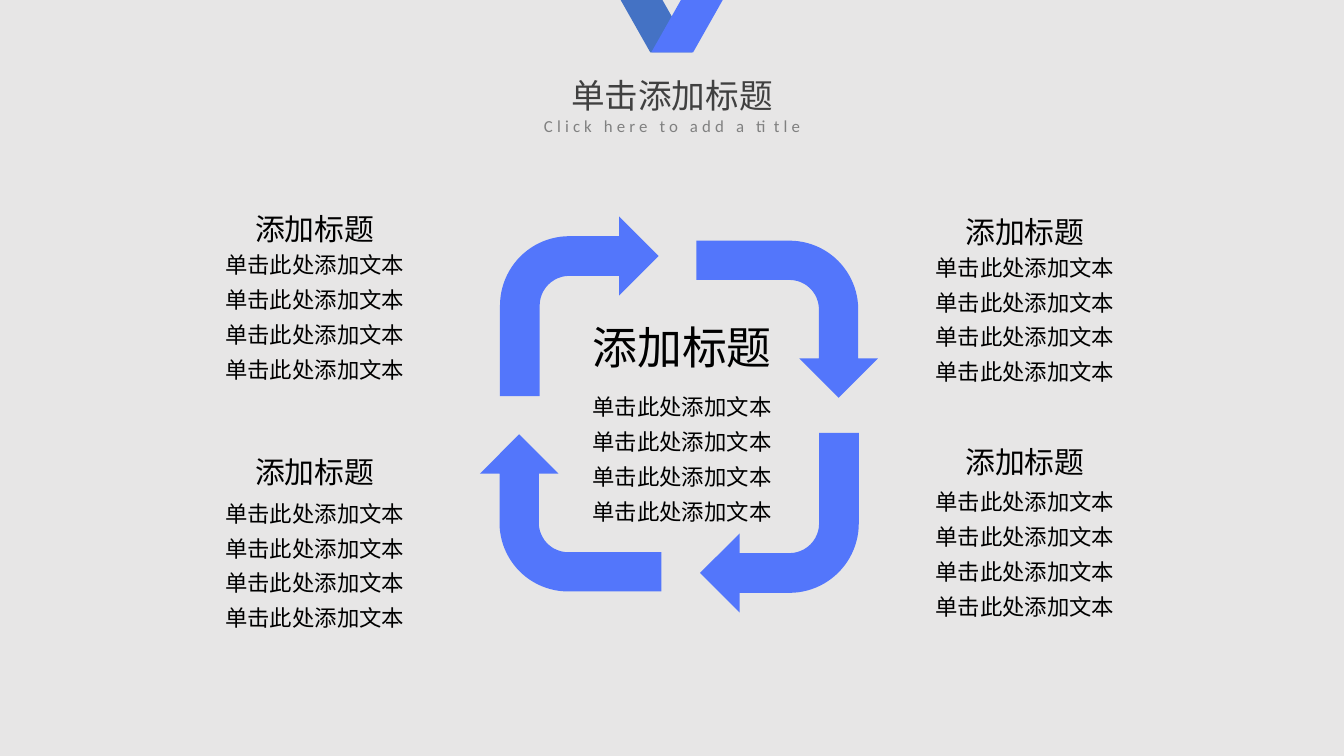
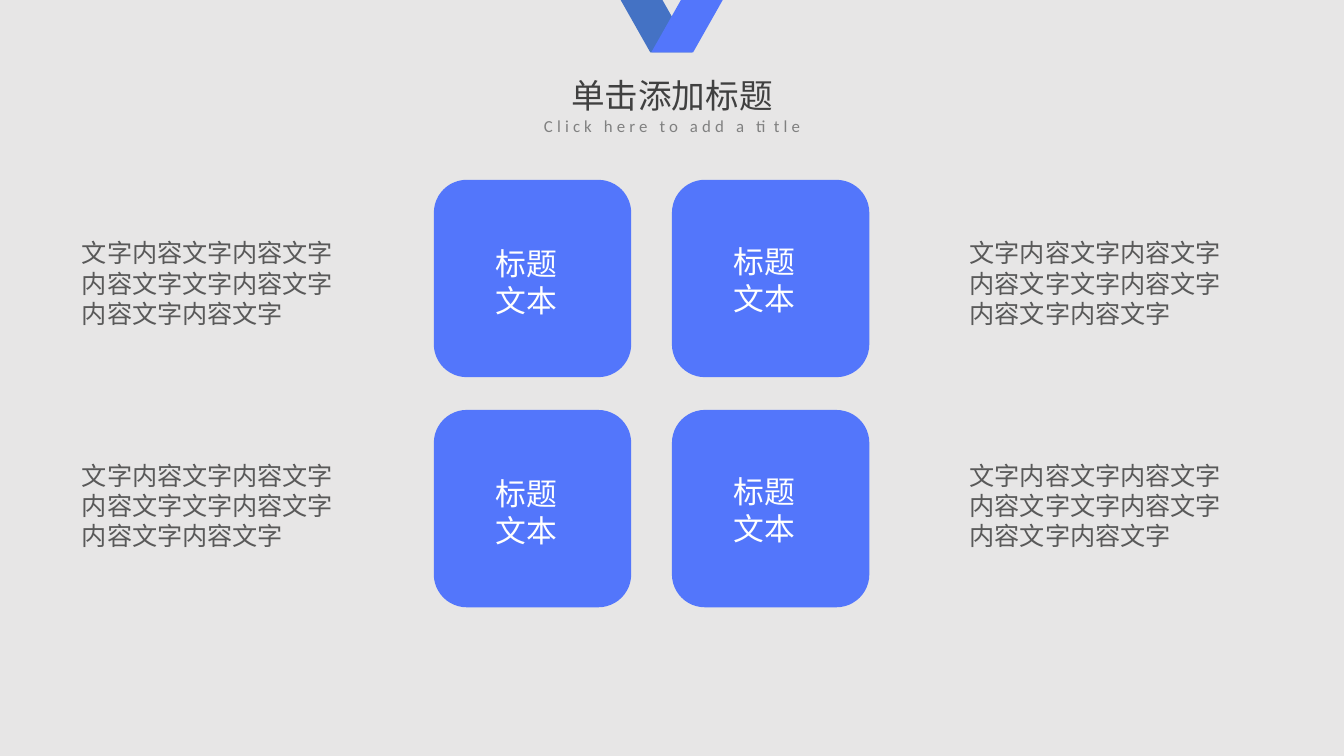
from pptx import Presentation
from pptx.dml.color import RGBColor as Rgb
from pptx.enum.shapes import MSO_SHAPE as Kind
from pptx.enum.text import MSO_AUTO_SIZE as Fit, PP_ALIGN as Align
from pptx.oxml.ns import qn
from pptx.util import Cm, Pt
from lxml.etree import SubElement as Sub

INK = {
    "back": "E7E6E6", "blue": "5376FB", "deep": "4472C4", "title": "404040",
    "sub": "808080", "black": "000000", "white": "FFFFFF", "note": "595959",
}
HAN, LATIN = "Noto Sans CJK SC", "Calibri"
HEAD, LINE = "添加标题", "单击此处添加文本"
NOTE = "文字内容文字内容文字内容文字文字内容文字内容文字内容文字"


def paint(shape, tone):
    shape.shadow.inherit = False
    shape.fill.solid()
    shape.fill.fore_color.rgb = Rgb.from_string(INK[tone])
    shape.line.fill.background()


def write(slide, box, lines, align=Align.CENTER, space=None):
    """Add a text box; each line is (text, size, tone, font, tracking)."""
    frame = slide.shapes.add_textbox(*map(Cm, box)).text_frame
    frame.word_wrap = True
    frame.auto_size = Fit.SHAPE_TO_FIT_TEXT
    for i, (text, size, tone, face, track) in enumerate(lines):
        para = frame.add_paragraph() if i else frame.paragraphs[0]
        para.alignment = align
        if space:
            para.line_spacing = space
        run = para.add_run()
        run.text = text
        font = run.font
        font.size, font.name = Pt(size), face
        font.color.rgb = Rgb.from_string(INK[tone])
        props = run._r.get_or_add_rPr()
        Sub(props, qn("a:ea")).set("typeface", face)
        if track:
            props.set("spc", str(round(track * 100)))


def han(text, size, tone):
    return text, size, tone, HAN, 0


def ribbon(slide, x, y, wide, high):
    """Draw two slanted bands that mirror each other and meet in a V."""
    band, foot = 0.79, 0.56
    left = [(0, 0), (band, 0), (foot + band, high), (foot, high)]
    right = [(wide - dx, dy) for dx, dy in left]
    for tone, dots in (("deep", left), ("blue", right)):
        dots = [(Cm(x + dx), Cm(y + dy)) for dx, dy in dots]
        form = slide.shapes.build_freeform(*dots[0])
        form.add_line_segments(dots[1:], close=True)
        paint(form.convert_to_shape(), tone)


def base(deck):
    """Add a slide with the shared background, title and ribbon."""
    slide = deck.slides.add_slide(deck.slide_layouts[6])
    fill = slide.background.fill
    fill.solid()
    fill.fore_color.rgb = Rgb.from_string(INK["back"])
    write(slide, (7.94, 1.3, 9.52, 1.42), [
        han("单击添加标题", 18, "title"),
        ("Click here to add a title", 9, "sub", LATIN, 2.2),
    ])
    ribbon(slide, 11.73, 0, 1.93, 0.99)
    return slide


def block(slide, x, y, gap, size=16, inset=0.6):
    """Place a heading with four lines that start gap below its top."""
    wide = 5
    write(slide, (x + inset, y, wide - 2 * inset, 0.94), [han(HEAD, size, "black")])
    write(slide, (x, y + gap, wide, 2.92), [han(LINE, 12, "black")] * 4, space=1.3)


def loop(slide, x, y):
    """Draw four bent arrows that turn clockwise."""
    for dx, dy, wide, high, turn in (
        (0.15, 0, 3, 3.4, 0),
        (4.09, 0.23, 2.97, 3.43, 90),
        (0, 3.89, 2.97, 3.43, 270),
        (3.93, 4.09, 3, 3.4, 180),
    ):
        place = map(Cm, (x + dx, y + dy, wide, high))
        arrow = slide.shapes.add_shape(Kind.BENT_ARROW, *place)
        arrow.rotation = turn
        paint(arrow, "blue")


def cycle(deck):
    slide = base(deck)
    loop(slide, 9.3, 4.09)
    block(slide, 10.39, 5.92, 1.24, size=24, inset=0.23)
    for x, y, gap in (
        (16.87, 3.91, 0.61), (16.87, 8.26, 0.69),
        (3.45, 3.86, 0.61), (3.45, 8.46, 0.71),
    ):
        block(slide, x, y, gap)


def card(slide, x, y, side, drop):
    """Draw a rounded tile with its label drop below the top edge."""
    tile = slide.shapes.add_shape(Kind.ROUNDED_RECTANGLE, *map(Cm, (x, y, side, side)))
    tile.adjustments[0] = 0.167
    paint(tile, "blue")
    write(slide, (x + 0.66, y + drop, 2.18, 1.68), [han("标题文本", 16.5, "white")])


def cards(deck):
    slide = base(deck)
    for row in range(2):
        for col, drop in enumerate((1.1, 1.06)):
            card(slide, 8.2 + 4.5 * col, 3.4 + 4.35 * row, 3.73, drop)
        for x, wide in ((1.3, 5.56), (18.08, 5.41)):
            write(slide, (x, 4.37 + 4.2 * row, wide, 2.57),
                  [han(NOTE, 13.5, "note")], Align.LEFT)


def main():
    deck = Presentation()
    deck.slide_width, deck.slide_height = Cm(25.4), Cm(14.29)
    cycle(deck)
    cards(deck)
    deck.save("out.pptx")


if __name__ == "__main__":
    main()
